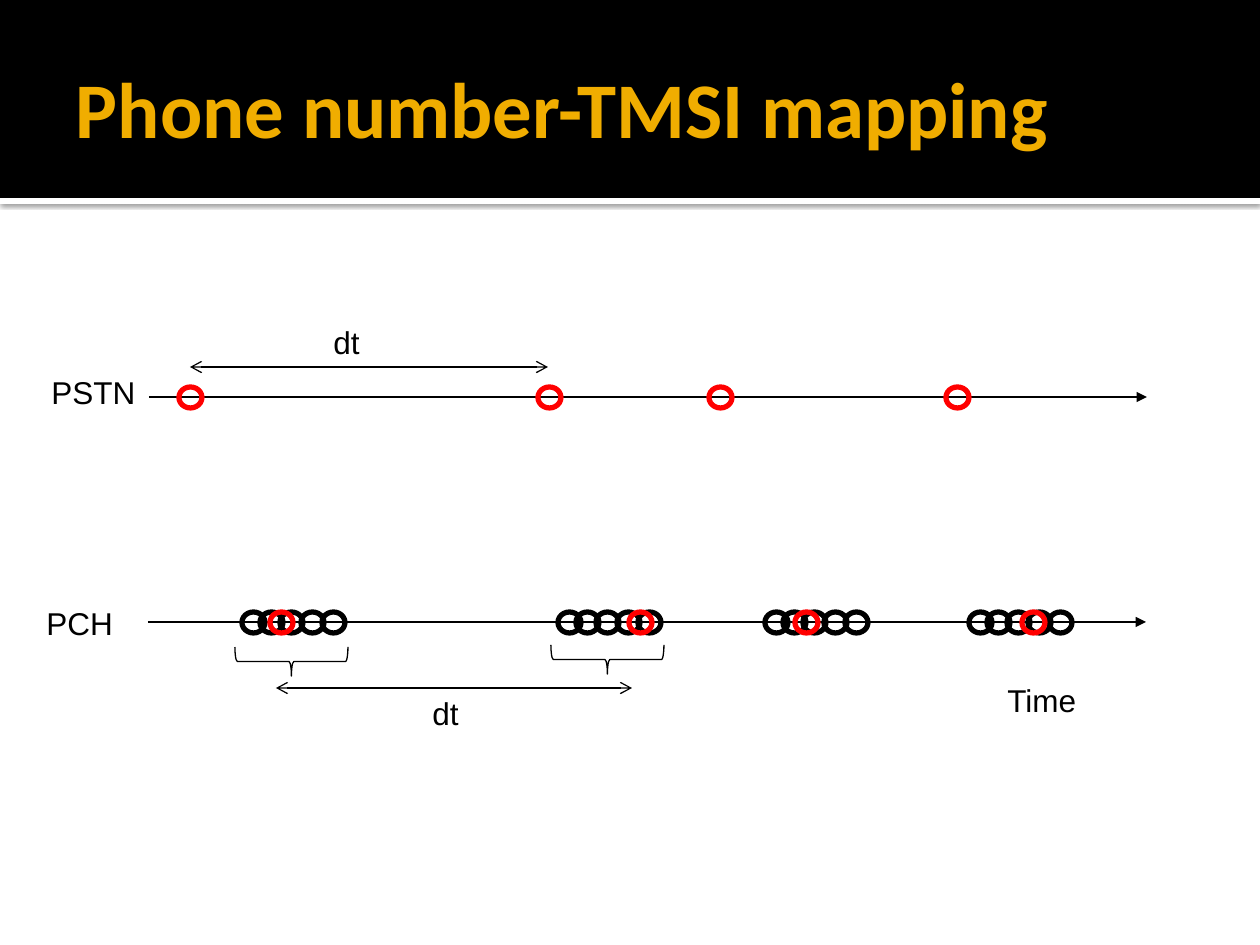
"""Build the phone number to TMSI mapping timeline slide."""
from lxml import etree
from pptx import Presentation
from pptx.dml.color import RGBColor
from pptx.enum.shapes import MSO_CONNECTOR as CONN, MSO_SHAPE as SHAPE
from pptx.enum.text import MSO_ANCHOR as ANCHOR, MSO_AUTO_SIZE as AUTO, PP_ALIGN as ALIGN
from pptx.oxml import parse_xml
from pptx.oxml.ns import qn
from pptx.util import Emu, Pt

NS = "http://schemas.openxmlformats.org/drawingml/2006/main"


def px(*values):
    return [Emu(round(v * 914400 / 126)) for v in values]


def add_shape(kind, box, fill=None, line=None, width=0.75):
    sp = s.shapes.add_shape(kind, *px(*box))
    sp.shadow.inherit = False
    if fill:
        sp.fill.solid()
        sp.fill.fore_color.rgb = RGBColor.from_string(fill)
    else:
        sp.fill.background()
    if line:
        sp.line.color.rgb = RGBColor.from_string(line)
        sp.line.width = Pt(width)
    else:
        sp.line.fill.background()
    return sp


prs = Presentation()
prs.slide_width, prs.slide_height = px(1260, 945)
s = prs.slides.add_slide(prs.slide_layouts[5])

title = s.shapes.title
title.left, title.top, title.width, title.height = px(63, 21, 1134, 173)
tf = title.text_frame
tf.text = "Phone number-TMSI mapping"
tf.word_wrap = True
tf.vertical_anchor = ANCHOR.MIDDLE
tf.margin_left, tf.margin_top, tf.margin_right, tf.margin_bottom = px(13, 6, 6, 6)
p = tf.paragraphs[0]
p.alignment = ALIGN.LEFT
font = p.runs[0].font
font.name, font.size, font.bold = "Calibri", Pt(45), True
font.color.rgb = RGBColor.from_string("F0AD00")

stripe = add_shape(SHAPE.RECTANGLE, (0, 198, 1260, 6), fill="FFFFFF")
stripe.element.spPr.find(qn("a:effectLst")).append(parse_xml(
    f'<a:outerShdw xmlns:a="{NS}" blurRad="31750" dist="10160" dir="5400000" algn="tl" rotWithShape="0">'
    '<a:srgbClr val="000000"><a:alpha val="60000"/></a:srgbClr></a:outerShdw>'))
header = add_shape(SHAPE.RECTANGLE, (0, 0, 1260, 198), fill="000000")
for sp in (stripe, header):
    title.element.addprevious(sp.element)

for left in (242, 558, 765, 969):
    for offset in (0, 18, 38, 59, 80):
        add_shape(SHAPE.OVAL, (left + offset, 612, 23, 21), line="000000", width=3)

arrows = [
    (149, 1147, 397, {"tailEnd": "triangle"}),
    (148, 1146, 622, {"tailEnd": "triangle"}),
    (190, 548, 367, {"headEnd": "arrow", "tailEnd": "arrow"}),
    (276, 632, 688, {"headEnd": "arrow", "tailEnd": "arrow"}),
]
for x1, x2, y, ends in arrows:
    c = s.shapes.add_connector(CONN.STRAIGHT, *px(x1, y, x2, y))
    c.line.color.rgb = RGBColor.from_string("000000")
    c.line.width = Pt(0.75)
    for end, kind in ends.items():
        etree.SubElement(c.line._get_or_add_ln(), qn(f"a:{end}"), type=kind)
    etree.SubElement(c.element.spPr, qn("a:effectLst"))

for top, lefts in ((387, (179, 538, 709, 946)), (612, (270, 629, 795, 1022))):
    for left in lefts:
        add_shape(SHAPE.OVAL, (left, top, 23, 21), line="FF0000", width=3)

for left, top in ((277, 605), (593, 603)):
    brace = add_shape(SHAPE.LEFT_BRACE, (left, top, 29, 113), line="000000")
    brace.rotation = 270

labels = [
    ("PSTN", 39, 367, 111),
    ("PCH", 34, 598, 92),
    ("Time", 995, 675, 95),
    ("dt", 321, 317, 52),
    ("dt", 420, 688, 52),
]
for text, left, top, width in labels:
    tf = s.shapes.add_textbox(*px(left, top, width, 50)).text_frame
    tf.text = text
    tf.word_wrap = False
    tf.auto_size = AUTO.SHAPE_TO_FIT_TEXT
    font = tf.paragraphs[0].runs[0].font
    font.name, font.size = "Arial", Pt(18)
    font.color.rgb = RGBColor.from_string("000000")

prs.save("out.pptx")
